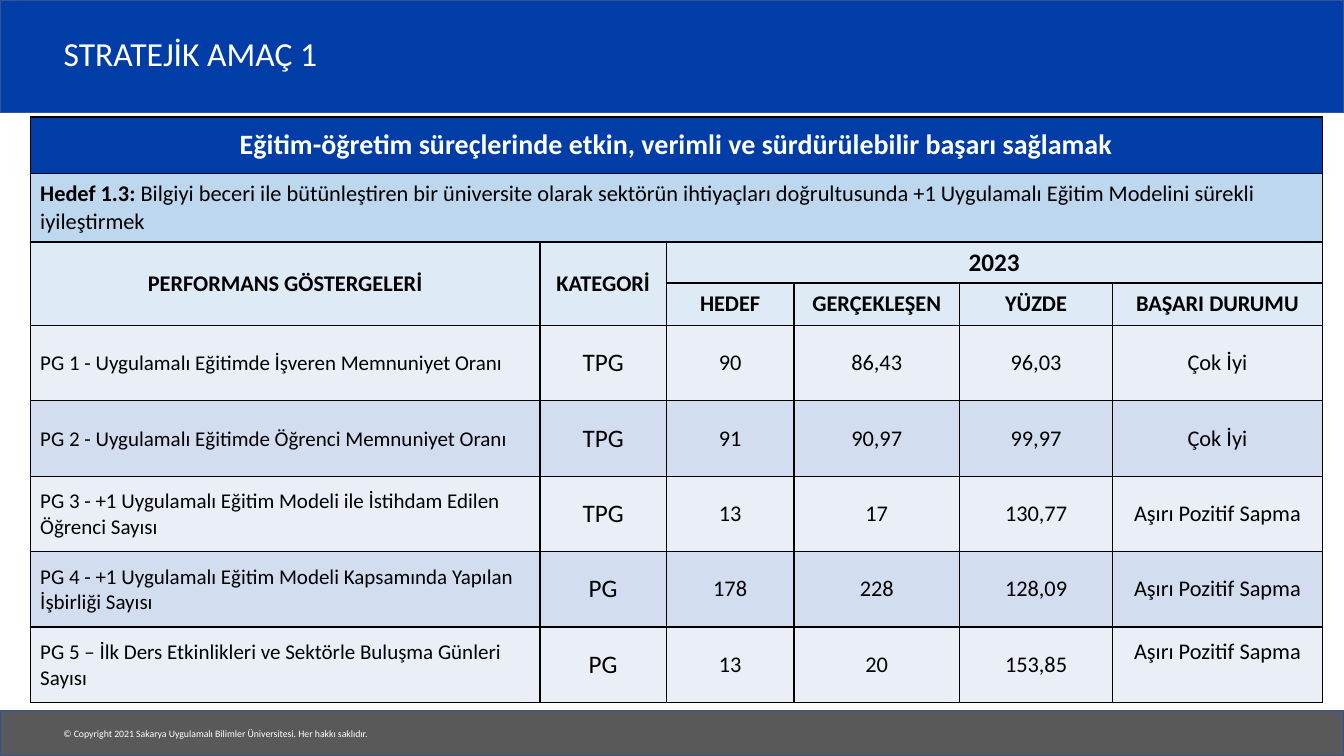
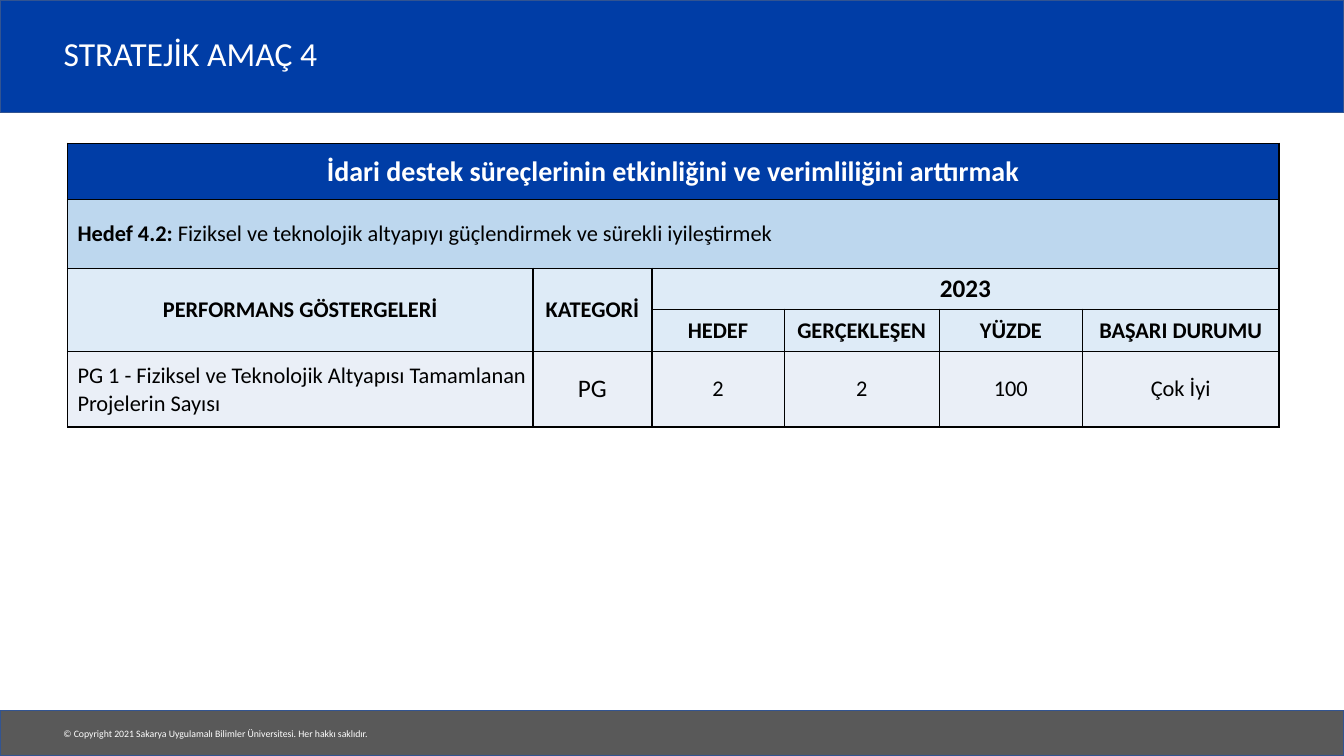
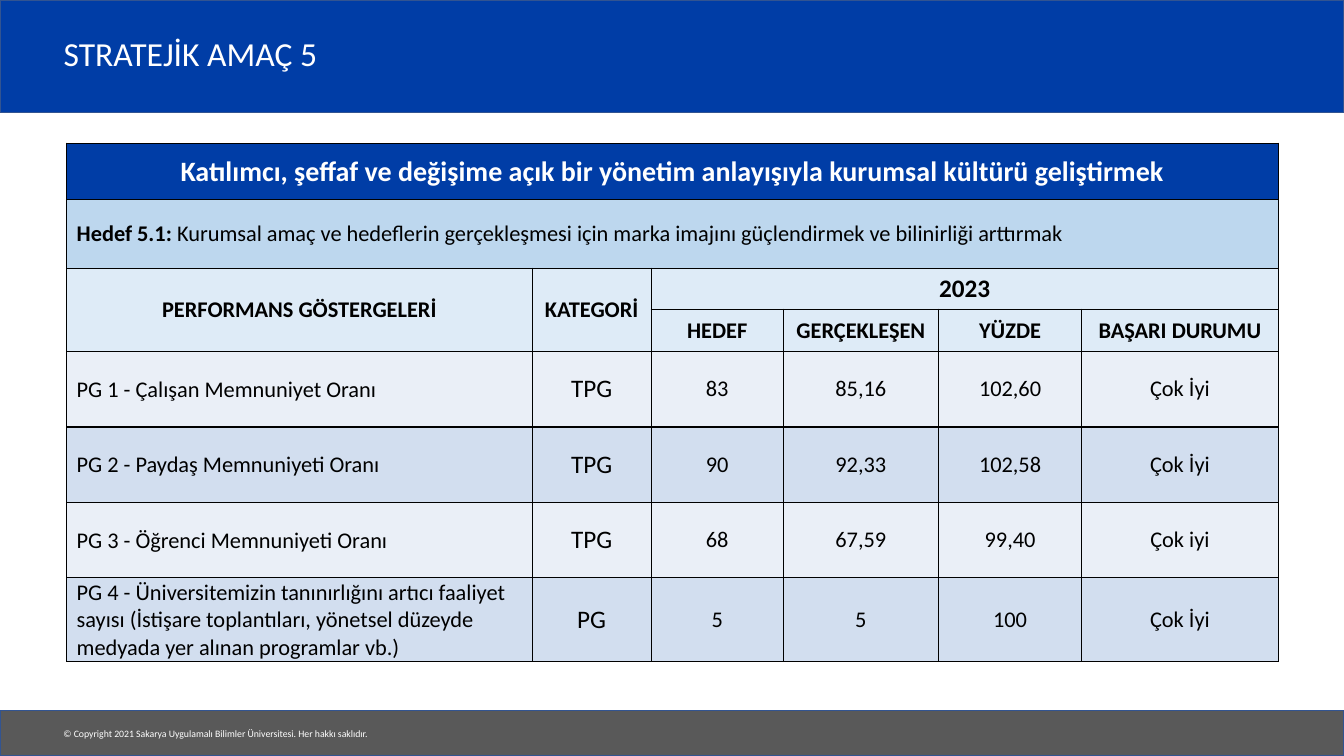
from lxml import etree
from pptx import Presentation
from pptx import util as u
from pptx.dml.color import RGBColor
from pptx.enum import shapes, text
from pptx.oxml.ns import qn

hues = {"blue": "003DA6", "gray": "595959", "edge": "325491", "white": "FFFFFF", "black": "000000",
        "goal": "BDD7EE", "head": "DEEBF7", "odd": "EAEFF7", "even": "D2DEEF"}
mid = text.PP_ALIGN.CENTER
wide = [11.73, 3, 3.33, 3.91, 3.61, 4.95]

decks = [
    {"title": "STRATEJİK AMAÇ 1", "left": 0.76, "top": 2.95, "size": 15,
     "cols": [12.85, 3.18, 3.22, 4.17, 3.86, 5.28],
     "aim": "Eğitim-öğretim süreçlerinde etkin, verimli ve sürdürülebilir başarı sağlamak",
     "goal": ("Hedef 1.3: ", "Bilgiyi beceri ile bütünleştiren bir üniversite olarak sektörün ihtiyaçları "
              "doğrultusunda +1 Uygulamalı Eğitim Modelini sürekli iyileştirmek"),
     "rows": [
         ("PG 1 - Uygulamalı Eğitimde İşveren Memnuniyet Oranı", "TPG", "90", "86,43", "96,03", "Çok İyi"),
         ("PG 2 - Uygulamalı Eğitimde Öğrenci Memnuniyet Oranı", "TPG", "91", "90,97", "99,97", "Çok İyi"),
         ("PG 3 - +1 Uygulamalı Eğitim Modeli ile İstihdam Edilen Öğrenci Sayısı",
          "TPG", "13", "17", "130,77", "Aşırı Pozitif Sapma"),
         ("PG 4 - +1 Uygulamalı Eğitim Modeli Kapsamında Yapılan İşbirliği Sayısı",
          "PG", "178", "228", "128,09", "Aşırı Pozitif Sapma"),
         ("PG 5 – İlk Ders Etkinlikleri ve Sektörle Buluşma Günleri Sayısı",
          "PG", "13", "20", "153,85", "Aşırı Pozitif Sapma")]},
    {"title": "STRATEJİK AMAÇ 4", "left": 1.7, "top": 3.61, "size": 16, "cols": wide,
     "aim": "İdari destek süreçlerinin etkinliğini ve verimliliğini arttırmak",
     "goal": ("Hedef 4.2: ", "Fiziksel ve teknolojik altyapıyı güçlendirmek ve sürekli iyileştirmek"),
     "rows": [
         ("PG 1 - Fiziksel ve Teknolojik Altyapısı Tamamlanan Projelerin Sayısı",
          "PG", "2", "2", "100", "Çok İyi")]},
    {"title": "STRATEJİK AMAÇ 5", "left": 1.68, "top": 3.61, "size": 16, "cols": wide,
     "aim": "Katılımcı, şeffaf ve değişime açık bir yönetim anlayışıyla kurumsal kültürü geliştirmek",
     "goal": ("Hedef 5.1: ", "Kurumsal amaç ve hedeflerin gerçekleşmesi için marka imajını güçlendirmek "
              "ve bilinirliği arttırmak"),
     "rows": [
         ("PG 1 - Çalışan Memnuniyet Oranı", "TPG", "83", "85,16", "102,60", "Çok İyi"),
         ("PG 2 - Paydaş Memnuniyeti Oranı", "TPG", "90", "92,33", "102,58", "Çok İyi"),
         ("PG 3 - Öğrenci Memnuniyeti Oranı", "TPG", "68", "67,59", "99,40", "Çok iyi"),
         ("PG 4 - Üniversitemizin tanınırlığını artıcı faaliyet sayısı (İstişare toplantıları, "
          "yönetsel düzeyde medyada yer alınan programlar vb.)", "PG", "5", "5", "100", "Çok İyi")]},
]


def write(para, words, size, hue="black", bold=False, align=text.PP_ALIGN.LEFT):
    para.alignment = align
    run = para.add_run()
    run.text = words
    run.font.name = "Calibri"
    run.font.size = u.Pt(size)
    run.font.bold = bold
    run.font.color.rgb = RGBColor.from_string(hues[hue])


def paint(cell, hue):
    props = cell._tc.get_or_add_tcPr()
    for side in ("lnL", "lnR", "lnT", "lnB"):
        line = etree.SubElement(props, qn("a:" + side), w=str(u.Pt(1)))
        fill = etree.SubElement(line, qn("a:solidFill"))
        etree.SubElement(fill, qn("a:srgbClr"), val=hues["black"])
    cell.fill.solid()
    cell.fill.fore_color.rgb = RGBColor.from_string(hues[hue])
    cell.vertical_anchor = text.MSO_ANCHOR.MIDDLE


prs = Presentation()
prs.slide_width, prs.slide_height = u.Cm(33.87), u.Cm(19.05)
layout = prs.slide_layouts[5]
for spot in list(layout.placeholders)[1:]:
    spot.element.getparent().remove(spot.element)

for num, deck in enumerate(decks):
    slide = prs.slides.add_slide(layout)

    if num == 0:
        parts = []
        for top, high, hue in ((0, 2.84, "blue"), (17.9, 1.15, "gray")):
            band = slide.shapes.add_shape(shapes.MSO_SHAPE.RECTANGLE, 0, u.Cm(top), prs.slide_width, u.Cm(high))
            band.shadow.inherit = False
            band.fill.solid()
            band.fill.fore_color.rgb = RGBColor.from_string(hues[hue])
            band.line.color.rgb = RGBColor.from_string(hues["edge"])
            band.line.width = u.Pt(1)
            parts.append(band)
        note = slide.shapes.add_textbox(u.Cm(1.35), u.Cm(18.21), u.Cm(8.36), u.Cm(0.56))
        note.text_frame.word_wrap = False
        note.text_frame.auto_size = text.MSO_AUTO_SIZE.SHAPE_TO_FIT_TEXT
        write(note.text_frame.paragraphs[0],
              "© Copyright 2021 Sakarya Uygulamalı Bilimler Üniversitesi. Her hakkı saklıdır.", 7, "white")
        for part in parts + [note]:
            layout.shapes.element.append(part.element)

    title = slide.shapes.title
    title.left, title.top, title.width, title.height = u.Cm(1.35), u.Cm(0.48), u.Cm(28.02), u.Cm(1.85)
    title.text_frame.vertical_anchor = text.MSO_ANCHOR.MIDDLE
    title.text_frame.paragraphs[0].line_spacing = 0.9
    write(title.text_frame.paragraphs[0], deck["title"], 24, "white")

    highs = [1.42, 1.73, 1.03, 1.07] + [1.9] * len(deck["rows"])
    frame = slide.shapes.add_table(len(highs), 6, u.Cm(deck["left"]), u.Cm(deck["top"]),
                                   u.Cm(sum(deck["cols"])), u.Cm(sum(highs)))
    table = frame.table
    table.first_row = table.horz_banding = False
    for col, width in zip(table.columns, deck["cols"]):
        col.width = u.Cm(width)
    for row, high in zip(table.rows, highs):
        row.height = u.Cm(high)
    for r in range(len(highs)):
        hue = ("blue", "goal", "head", "head")[r] if r < 4 else ("odd", "even")[r % 2]
        for c in range(6):
            paint(table.cell(r, c), hue)
    for r, c, end, last in ((0, 0, 0, 5), (1, 0, 1, 5), (2, 0, 3, 0), (2, 1, 3, 1), (2, 2, 2, 5)):
        table.cell(r, c).merge(table.cell(end, last))

    write(table.cell(0, 0).text_frame.paragraphs[0], deck["aim"], 20, "white", True, mid)
    for words, bold in zip(deck["goal"], (True, False)):
        write(table.cell(1, 0).text_frame.paragraphs[0], words, 16, bold=bold)
    heads = [(2, 0, "PERFORMANS GÖSTERGELERİ", 16), (2, 1, "KATEGORİ", 16), (2, 2, "2023", 18),
             (3, 2, "HEDEF", 16), (3, 3, "GERÇEKLEŞEN", 16), (3, 4, "YÜZDE", 16), (3, 5, "BAŞARI DURUMU", 16)]
    for r, c, words, size in heads:
        write(table.cell(r, c).text_frame.paragraphs[0], words, size, bold=True, align=mid)

    for r, row in enumerate(deck["rows"], 4):
        name = table.cell(r, 0)
        name.margin_right = name.margin_top = u.Cm(0.03)
        name.margin_bottom = 0
        write(name.text_frame.paragraphs[0], row[0], deck["size"])
        for c, words in enumerate(row[1:], 1):
            write(table.cell(r, c).text_frame.paragraphs[0], words, 18 if c == 1 else 16, align=mid)
    if num == 0:
        table.cell(8, 5).margin_bottom = u.Cm(0.8)

prs.save("out.pptx")
